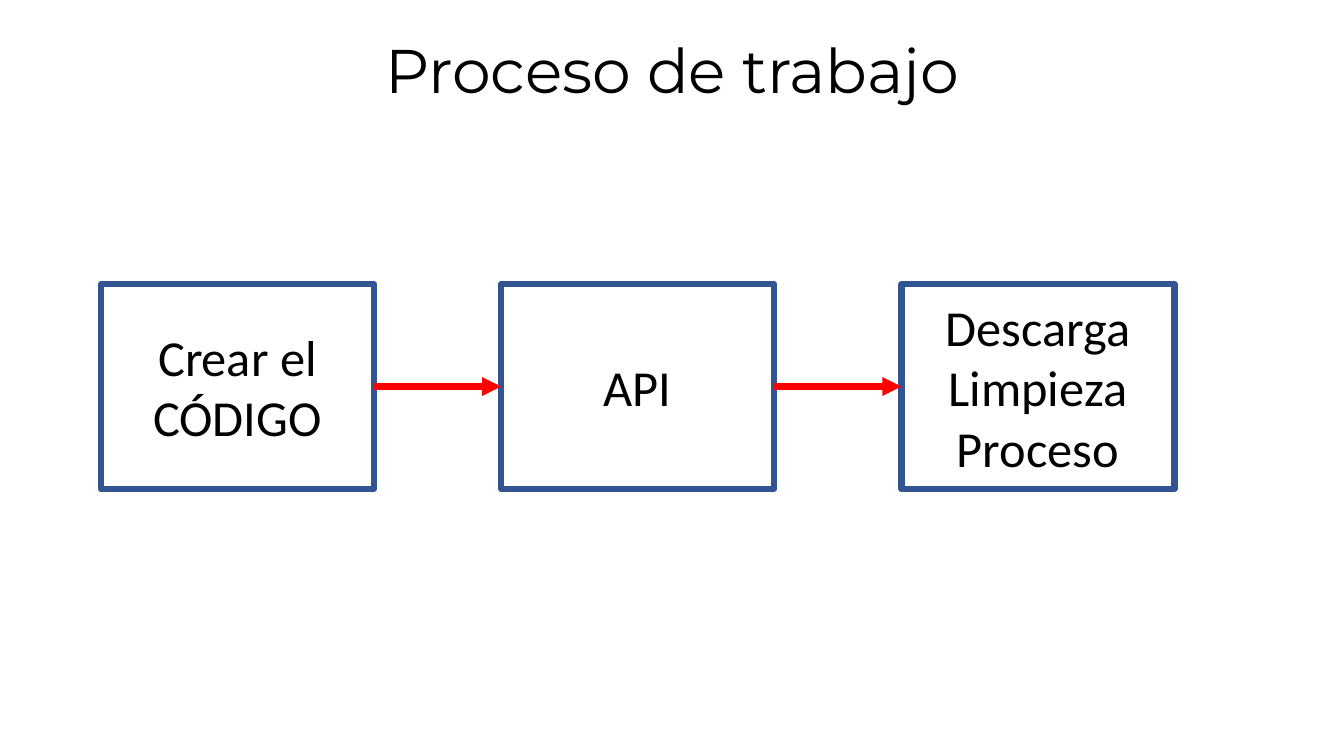
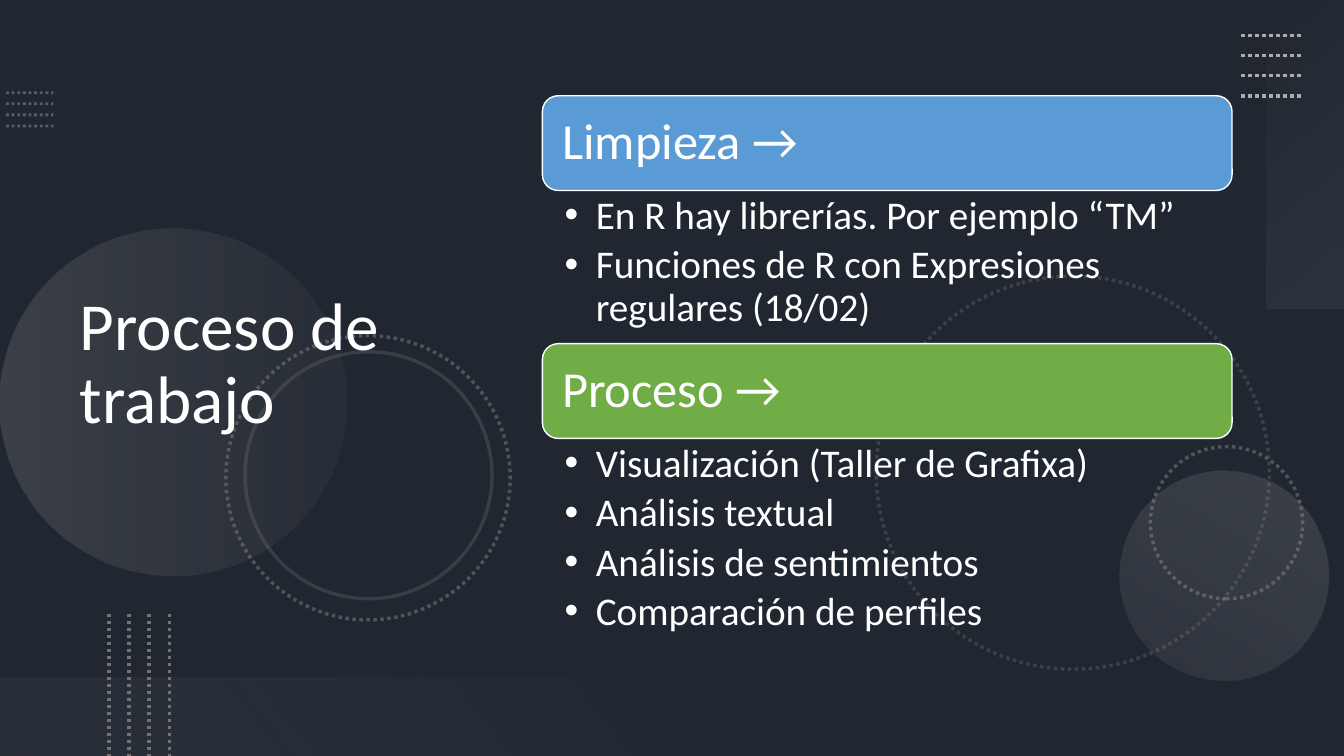
from dataclasses import dataclass

from lxml.etree import SubElement
from pptx import Presentation
from pptx.dml.color import RGBColor
from pptx.enum.dml import MSO_LINE
from pptx.enum.shapes import MSO_CONNECTOR, MSO_SHAPE
from pptx.enum.text import MSO_ANCHOR, MSO_AUTO_SIZE, PP_ALIGN
from pptx.oxml.ns import qn
from pptx.util import Inches, Pt


@dataclass(frozen=True)
class Theme:
    black: str = "000000"
    white: str = "FFFFFF"
    night: str = "44546A"
    navy: str = "325491"
    red: str = "FF0000"
    blue: str = "5B9BD5"
    green: str = "70AD47"
    steel: str = "8497B0"
    gray: str = "767171"
    silver: str = "AFABAB"
    mist: str = "F5F5F5"
    body_font: str = "Calibri"
    display_font: str = "Montserrat"
    title_size: int = 44
    side_title_size: int = 48
    heading_size: int = 36
    list_size: int = 28


THEME = Theme()


def paint(shape, fill=None, line=None, width=2.5, dash=None, alphas=(), angle=0):
    """Set a flat look: fill is None (untouched) or 0, 1 or 2 colours.

    alphas are opacity percentages, one per colour, fill before line.
    """
    if fill is not None:
        if len(fill) == 2:
            shape.fill.gradient()
            shape.fill.gradient_angle = 360 - angle
            for stop, color in zip(shape.fill.gradient_stops, fill):
                stop.color.rgb = RGBColor.from_string(color)
        elif fill:
            shape.fill.solid()
            shape.fill.fore_color.rgb = RGBColor.from_string(fill[0])
        else:
            shape.fill.background()
    if line:
        shape.line.color.rgb = RGBColor.from_string(line)
        shape.line.width = Pt(width)
        if dash:
            shape.line.dash_style = dash
    else:
        shape.line.fill.background()
    properties = shape._element.spPr
    for color, alpha in zip(properties.iter(qn("a:srgbClr")), alphas):
        SubElement(color, qn("a:alpha")).set("val", str(alpha * 1000))
    SubElement(properties, qn("a:effectLst"))


def write(shape, lines, size, color, align=PP_ALIGN.LEFT, anchor=MSO_ANCHOR.MIDDLE,
          font=THEME.body_font, spacing=0.9, after=0):
    """Fill the shape with one paragraph per line and return its paragraphs."""
    frame = shape.text_frame
    frame.word_wrap = True
    frame.auto_size = MSO_AUTO_SIZE.NONE
    frame.vertical_anchor = anchor
    for number, text in enumerate(lines):
        paragraph = frame.add_paragraph() if number else frame.paragraphs[0]
        paragraph.alignment = align
        paragraph.line_spacing = spacing
        paragraph.space_before = Pt(0)
        paragraph.space_after = Pt(after)
        run = paragraph.add_run()
        run.text = text
        run.font.size = Pt(size)
        run.font.name = font
        run.font.color.rgb = RGBColor.from_string(color)
    return frame.paragraphs


deck = Presentation()
deck.slide_width, deck.slide_height = Inches(13.33), Inches(7.5)

# Workflow overview
overview = deck.slides.add_slide(deck.slide_layouts[5])
title = overview.shapes.title
title.left, title.top, title.width, title.height = map(Inches, (0.92, 0, 11.5, 1.45))
write(title, ["Proceso de trabajo"], THEME.title_size, THEME.black,
      align=PP_ALIGN.CENTER, font=THEME.display_font)

STEPS = [["Crear el CÓDIGO"], ["API"], ["Descarga", "Limpieza", "Proceso"]]
STEP_PITCH = 3.97
previous = None
for index, lines in enumerate(STEPS):
    step = overview.shapes.add_shape(
        MSO_SHAPE.RECTANGLE, Inches(1 + index * STEP_PITCH), Inches(2.82),
        Inches(2.71), Inches(2.03))
    paint(step, fill=(), line=THEME.navy, width=4.5)
    write(step, lines, THEME.heading_size, THEME.black,
          align=PP_ALIGN.CENTER, spacing=1.0)
    if previous:
        arrow = overview.shapes.add_connector(MSO_CONNECTOR.STRAIGHT, 0, 0, 0, 0)
        arrow.begin_connect(previous, 3)
        arrow.end_connect(step, 1)
        paint(arrow, line=THEME.red, width=4.5)
        SubElement(arrow.line._get_or_add_ln(), qn("a:tailEnd")).set("type", "triangle")
    previous = step

# Details of cleaning and processing
details = deck.slides.add_slide(deck.slide_layouts[3])
details.background.fill.solid()
details.background.fill.fore_color.rgb = RGBColor.from_string(THEME.night)

DOTS = MSO_LINE.ROUND_DOT
RECT, OVAL = MSO_SHAPE.RECTANGLE, MSO_SHAPE.OVAL
RING = dict(fill=(), line=THEME.gray)
DOTTED_RING = dict(RING, dash=DOTS)
# Preset, left, top, width, height, rotation, look
BACKDROP = [
    (RECT, 0, 0, 13.33, 7.5, 0, dict(fill=(THEME.black,), alphas=(53,))),
    (OVAL, 8.69, 2.74, 3.9, 3.9, 75, dict(DOTTED_RING, alphas=(35,))),
    (OVAL, 11.41, 4.43, 1.51, 1.51, 270, dict(DOTTED_RING, alphas=(60,))),
    (OVAL, 0, 2.27, 3.44, 3.44, 270,
     dict(fill=(THEME.silver, THEME.gray), alphas=(20, 10), angle=90)),
    (OVAL, 11.1, 4.67, 2.08, 2.08, 210,
     dict(fill=(THEME.silver, THEME.silver), alphas=(10, 20), angle=90)),
    (OVAL, 2.24, 3.33, 2.82, 2.82, 75, dict(DOTTED_RING, alphas=(60,))),
    (OVAL, 2.43, 3.49, 2.45, 2.45, 75, dict(RING, alphas=(30,))),
    (RECT, 11.42, 1.14, 3.06, 0.78, 270,
     dict(fill=(THEME.mist, THEME.silver), alphas=(0, 10), angle=140)),
    (RECT, 0, 6.72, 6.67, 0.78, 180,
     dict(fill=(THEME.gray, THEME.mist), alphas=(10, 0), angle=140)),
]
for preset, left, top, width, height, rotation, look in BACKDROP:
    ornament = details.shapes.add_shape(preset, *map(Inches, (left, top, width, height)))
    ornament.rotation = rotation
    paint(ornament, **look)

# First line (x1, y1, x2, y2), step (dx, dy), look
DOT_ROWS = [
    ((0.06, 0.92, 0.53, 0.92), (0, 0.11), dict(line=THEME.steel, width=2, alphas=(50,))),
    ((12.31, 0.35, 12.91, 0.35), (0, 0.2), dict(line=THEME.silver)),
    ((1.08, 6.09, 1.08, 7.5), (0.2, 0), dict(line=THEME.gray)),
]
for (x1, y1, x2, y2), (dx, dy), look in DOT_ROWS:
    for index in range(4):
        ends = (x1 + index * dx, y1 + index * dy, x2 + index * dx, y2 + index * dy)
        dotted = details.shapes.add_connector(MSO_CONNECTOR.STRAIGHT, *map(Inches, ends))
        paint(dotted, dash=DOTS, **look)

title = details.shapes.title
title.left, title.top, title.width, title.height = map(Inches, (0.69, 0.54, 4.59, 6.17))
write(title, ["Proceso de trabajo"], THEME.side_title_size, THEME.white)

LEFT, WIDTH, HEADING_HEIGHT = 5.38, 6.84, 0.94
# Heading, colour, top, list height, items
TOPICS = [
    ("Limpieza →", THEME.blue, 0.95, 1.51,
     ["En R hay librerías. Por ejemplo “TM”",
      "Funciones de R con Expresiones regulares (18/02)"]),
    ("Proceso →", THEME.green, 3.41, 2.12,
     ["Visualización (Taller de Grafixa)", "Análisis textual",
      "Análisis de sentimientos", "Comparación de perfiles"]),
]
tree = title._element.getparent()
tree.append(title._element)  # bring in front of the backdrop
for number, (heading, color, top, height, items) in enumerate(TOPICS, start=1):
    banner = details.shapes.add_shape(
        MSO_SHAPE.ROUNDED_RECTANGLE, *map(Inches, (LEFT, top, WIDTH, HEADING_HEIGHT)))
    paint(banner, fill=(color,), line=THEME.white, width=1)
    banner.text_frame.margin_left = Inches(0.15)
    write(banner, [heading], THEME.heading_size, THEME.white)

    points = details.placeholders[number]
    points.left, points.top, points.width, points.height = map(
        Inches, (LEFT, top + HEADING_HEIGHT, WIDTH, height))
    points.text_frame.margin_left = Inches(0.22)
    points.text_frame.margin_right = Inches(0.28)
    for paragraph in write(points, items, THEME.list_size, THEME.white,
                           anchor=MSO_ANCHOR.TOP, after=5):
        indents = paragraph._p.get_or_add_pPr()
        indents.set("marL", str(Inches(0.31)))
        indents.set("indent", str(-Inches(0.31)))
    tree.append(points._element)

deck.save("out.pptx")
